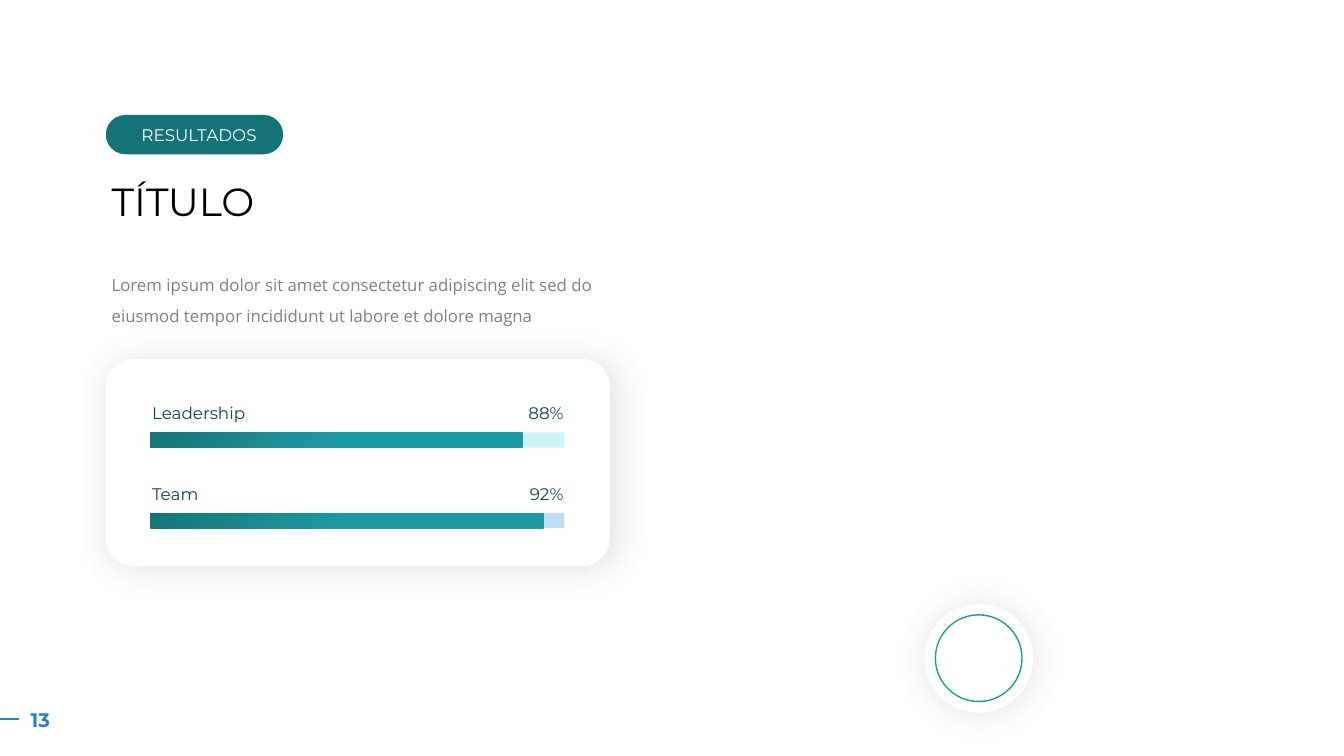
from lxml import etree
from pptx import Presentation
from pptx.dml.color import RGBColor
from pptx.enum.shapes import MSO_CONNECTOR as LINE, MSO_SHAPE as SHAPE
from pptx.enum.text import MSO_ANCHOR as ANCHOR, MSO_AUTO_SIZE as AUTO, PP_ALIGN as ALIGN
from pptx.oxml import parse_xml
from pptx.oxml.ns import nsdecls, qn
from pptx.util import Inches, Pt

COLUMNS, ROWS = 160, 90
TEAL, DARK_TEAL, DEEP_TEAL = "1D9AA1", "157378", "167479"
BLUE, NAVY, GREY, WHITE, BLACK = "2683C6", "124163", "808080", "FFFFFF", "000000"

SOFT_SHADOW = f"""<a:effectLst {nsdecls('a')}>
  <a:outerShdw blurRad="{Pt(22)}" dist="0" dir="2700000" sx="102000" sy="102000"
    algn="tl" rotWithShape="0">
    <a:srgbClr val="{BLACK}"><a:alpha val="10000"/></a:srgbClr>
  </a:outerShdw>
</a:effectLst>"""

BAR_GRADIENT = f"""<a:gradFill {nsdecls('a')} rotWithShape="1">
  <a:gsLst>
    <a:gs pos="0"><a:srgbClr val="{DEEP_TEAL}"/></a:gs>
    <a:gs pos="50000"><a:srgbClr val="{TEAL}"/></a:gs>
    <a:gs pos="100000"><a:srgbClr val="{TEAL}"/></a:gs>
  </a:gsLst>
  <a:lin ang="2700000" scaled="0"/>
</a:gradFill>"""


def color(code):
    return RGBColor.from_string(code)


def write(frame, text, size=12, font="Montserrat", ink=NAVY, bold=False,
          align=ALIGN.LEFT, spacing=1, anchor=ANCHOR.TOP):
    frame.word_wrap = True
    frame.auto_size = AUTO.SHAPE_TO_FIT_TEXT
    frame.vertical_anchor = anchor
    paragraph = frame.paragraphs[0]
    paragraph.alignment = align
    paragraph.line_spacing = spacing
    run = paragraph.add_run()
    run.text = text
    run.font.name = font
    run.font.size = Pt(size)
    run.font.bold = bold
    run.font.color.rgb = color(ink)


class Page:
    def __init__(self, deck):
        self.column = deck.slide_width / COLUMNS
        self.row = deck.slide_height / ROWS
        self.shapes = deck.slides.add_slide(deck.slide_layouts[6]).shapes

    def place(self, left, top, width, height):
        return (round(left * self.column), round(top * self.row),
                round(width * self.column), round(height * self.row))

    def text(self, box, words, **style):
        write(self.shapes.add_textbox(*self.place(*box)).text_frame, words, **style)

    def shape(self, kind, box, fill=None, outline=None, corner=None, raised=False):
        item = self.shapes.add_shape(kind, *self.place(*box))
        if corner is not None:
            item.adjustments[0] = corner
        if fill:
            item.fill.solid()
            item.fill.fore_color.rgb = color(fill)
        else:
            item.fill.background()
        if outline:
            item.line.color.rgb = color(outline)
            item.line.width = Pt(1)
        else:
            item.line.fill.background()
        if raised:
            item._element.spPr.append(parse_xml(SOFT_SHADOW))
        else:
            item.shadow.inherit = False
        return item

    def circle(self, center, diameter, **style):
        x, y = center
        box = (x - diameter / 2, y - diameter / 2, diameter, diameter)
        self.shape(SHAPE.OVAL, box, **style)

    def line(self, start, end, ink, width):
        x1, y1, x2, y2 = self.place(*start, *end)
        rule = self.shapes.add_connector(LINE.STRAIGHT, x1, y1, x2, y2)
        rule.line.color.rgb = color(ink)
        rule.line.width = Pt(width)
        etree.SubElement(rule._element.spPr, qn("a:effectLst"))

    def progress(self, top, label, percent, length, track_fill):
        self.shape(SHAPE.RECTANGLE, (28.32, top + 5.28, 38.88, 1.8), fill=track_fill)
        bar = self.shape(SHAPE.RECTANGLE, (17.88, top + 5.28, length, 1.8), fill=TEAL)
        properties = bar._element.spPr
        properties.replace(properties.find(qn("a:solidFill")), parse_xml(BAR_GRADIENT))
        self.text((16.92, top, 45.84, 4.44), label, spacing=1.5)
        self.text((58.92, top, 9.36, 4.44), percent, spacing=1.5, align=ALIGN.RIGHT)


def main():
    deck = Presentation()
    deck.slide_width, deck.slide_height = Inches(40 / 3), Inches(7.5)
    page = Page(deck)

    page.text((1.44, 83.64, 6.72, 4.08), "13", size=14, ink=BLUE, bold=True,
              align=ALIGN.CENTER, anchor=ANCHOR.MIDDLE)
    page.line((2.28, 85.56), (0, 85.56), BLUE, 1.5)

    page.text((12.12, 20.52, 61.08, 6.84), "TÍTULO", size=28, ink=BLACK)
    page.text((12.12, 30.96, 64.32, 8.04),
              "Lorem ipsum dolor sit amet consectetur adipiscing elit sed do "
              "eiusmod tempor incididunt ut labore et dolore magna",
              font="Open Sans", ink=GREY, spacing=1.5)

    page.shape(SHAPE.ROUNDED_RECTANGLE, (12.6, 42.72, 60, 24.72),
               fill=WHITE, corner=0.135, raised=True)
    skills = [("Leadership", "88%", 44.28, "C9F3F5"), ("Team", "92%", 46.8, "BFDDF3")]
    for index, skill in enumerate(skills):
        page.progress(46.2 + 9.6 * index, *skill)

    page.shape(SHAPE.ROUNDED_RECTANGLE, (12.6, 13.68, 21.12, 4.68),
               fill=DARK_TEAL, corner=0.5)
    page.text((14.64, 14.28, 18.12, 3.6), "RESULTADOS", ink=WHITE, align=ALIGN.CENTER)

    badge_center = (116.52, 78.36)
    page.circle(badge_center, 12.96, fill=WHITE, raised=True)
    page.circle(badge_center, 10.32, outline=TEAL)

    deck.save("out.pptx")


if __name__ == "__main__":
    main()
